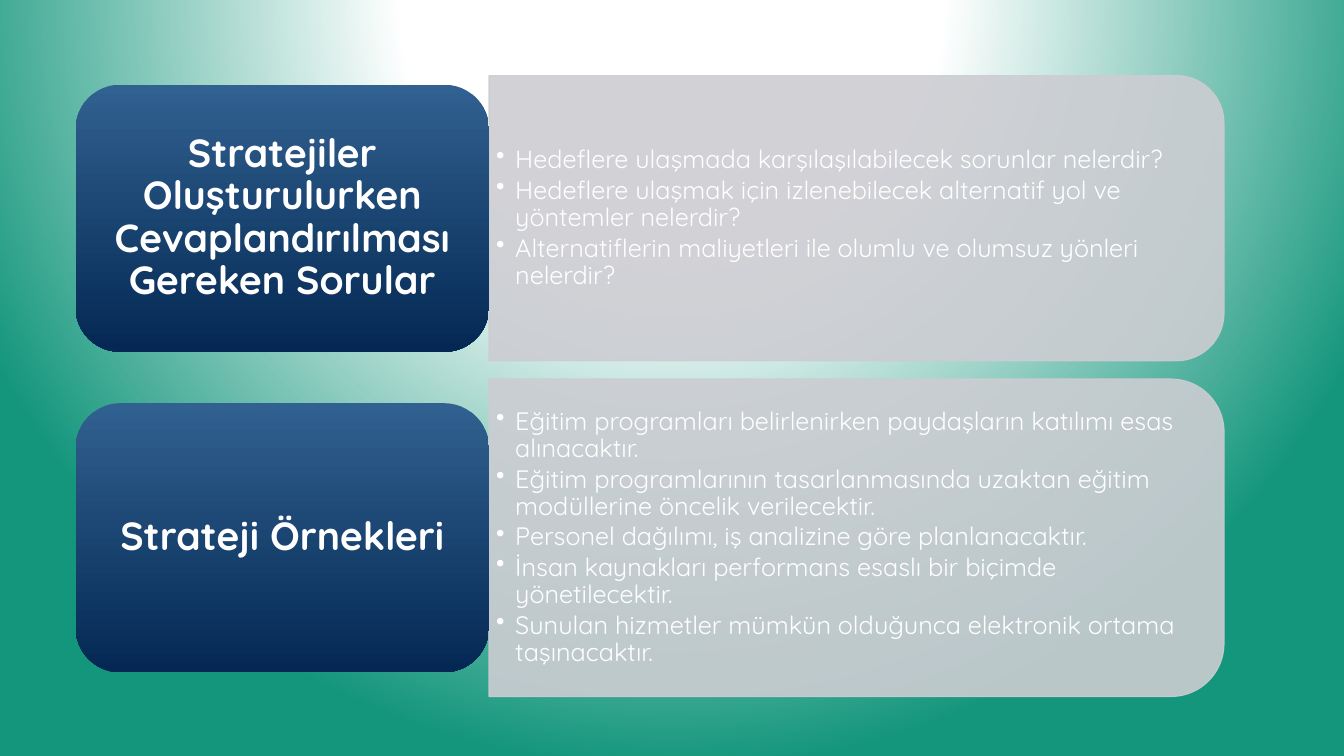
from lxml.etree import SubElement
from pptx import Presentation
from pptx.dml.color import RGBColor
from pptx.enum.shapes import MSO_SHAPE
from pptx.enum.text import MSO_ANCHOR, PP_ALIGN
from pptx.oxml import parse_xml
from pptx.oxml.ns import nsdecls, qn
from pptx.util import Inches, Pt

ROWS = [
    {
        "title": "Stratejiler Oluşturulurken Cevaplandırılması Gereken Sorular",
        "points": [
            "Hedeflere ulaşmada karşılaşılabilecek sorunlar nelerdir?",
            "Hedeflere ulaşmak için izlenebilecek alternatif yol ve yöntemler nelerdir?",
            "Alternatiflerin maliyetleri ile olumlu ve olumsuz yönleri nelerdir?",
        ],
        "panel_height": 2.83,
        "card_height": 2.65,
    },
    {
        "title": "Strateji Örnekleri",
        "points": [
            "Eğitim programları belirlenirken paydaşların katılımı esas alınacaktır.",
            "Eğitim programlarının tasarlanmasında uzaktan eğitim modüllerine öncelik verilecektir.",
            "Personel dağılımı, iş analizine göre planlanacaktır.",
            "İnsan kaynakları performans esaslı bir biçimde yönetilecektir.",
            "Sunulan hizmetler mümkün olduğunca elektronik ortama taşınacaktır.",
        ],
        "panel_height": 3.15,
        "card_height": 2.67,
    },
]
COLORS = {
    "white": "FFFFFF",
    "green": "14967C",
    "panel": "CCCDD2",
    "card_top": "316190",
    "card_bottom": "042853",
}
FONT = "Quicksand"
TITLE_FONT = {"size": Pt(28), "bold": True}
POINT_FONT = {"size": Pt(18), "bold": False}
TOP, ROW_GAP = 0.75, 0.18
CARD_LEFT, CARD_WIDTH = 0.75, 4.1
PANEL_LEFT, PANEL_WIDTH = CARD_LEFT + CARD_WIDTH, 7.29
CORNER_INSET = 0.05  # share of the panel height its rounded corners take from the text


def color(name):
    return RGBColor.from_string(COLORS[name])


def set_background(slide):
    """Radial gradient, centred above the slide."""
    slide.background.fill.solid()
    properties = slide.element.cSld.find(qn("p:bg")).find(qn("p:bgPr"))
    stops = "".join(
        f'<a:gs pos="{position * 1000}"><a:srgbClr val="{COLORS[name]}"/></a:gs>'
        for position, name in [(0, "white"), (35, "white"), (100, "green")]
    )
    gradient = parse_xml(
        f'<a:gradFill {nsdecls("a")} rotWithShape="1"><a:gsLst>{stops}</a:gsLst>'
        '<a:path path="circle"><a:fillToRect l="50000" t="-80000" r="50000" b="180000"/>'
        "</a:path></a:gradFill>"
    )
    properties.replace(properties.find(qn("a:solidFill")), gradient)


def format_frame(frame, margin_x, margin_y):
    settings = {
        "word_wrap": True,
        "vertical_anchor": MSO_ANCHOR.MIDDLE,
        "margin_left": Inches(margin_x),
        "margin_right": Inches(margin_x),
        "margin_top": Inches(margin_y),
        "margin_bottom": Inches(margin_y),
    }
    for name, value in settings.items():
        setattr(frame, name, value)


def write_paragraph(paragraph, text, font_format, alignment, space_after):
    paragraph.alignment = alignment
    paragraph.line_spacing = 0.9
    paragraph.space_after = Pt(space_after)
    run = paragraph.add_run()
    run.text = text
    run.font.color.rgb = color("white")
    for name, value in {"name": FONT, **font_format}.items():
        setattr(run.font, name, value)


def add_bullet(paragraph):
    properties = paragraph._p.get_or_add_pPr()
    properties.set("marL", str(Inches(0.19)))
    properties.set("indent", str(-Inches(0.19)))
    SubElement(properties, qn("a:buChar")).set("char", "•")


def add_panel(slide, top, height):
    """Upright shape turned a quarter, so that its rounded side faces right."""
    left = PANEL_LEFT + (PANEL_WIDTH - height) / 2
    upright_top = top + (height - PANEL_WIDTH) / 2
    panel = slide.shapes.add_shape(
        MSO_SHAPE.ROUND_2_SAME_RECTANGLE,
        Inches(left), Inches(upright_top), Inches(height), Inches(PANEL_WIDTH),
    )
    panel.rotation = 90
    panel.shadow.inherit = False
    panel.line.width = Pt(0.75)
    for fill in (panel.fill, panel.line.fill):
        fill.solid()
        fill.fore_color.rgb = color("panel")
    for rgb in panel._element.spPr.iter(qn("a:srgbClr")):
        SubElement(rgb, qn("a:alpha")).set("val", "90000")


def add_points(slide, points, top, height):
    inset = CORNER_INSET * height
    box = slide.shapes.add_textbox(
        Inches(PANEL_LEFT), Inches(top + inset),
        Inches(PANEL_WIDTH - inset), Inches(height - 2 * inset),
    )
    frame = box.text_frame
    format_frame(frame, 0.07, 0.04)
    for index, point in enumerate(points):
        paragraph = frame.add_paragraph() if index else frame.paragraphs[0]
        write_paragraph(paragraph, point, POINT_FONT, PP_ALIGN.LEFT, 2.5)
        add_bullet(paragraph)


def add_card(slide, title, top, height):
    card = slide.shapes.add_shape(
        MSO_SHAPE.ROUNDED_RECTANGLE,
        Inches(CARD_LEFT), Inches(top), Inches(CARD_WIDTH), Inches(height),
    )
    card.shadow.inherit = False
    card.line.fill.background()
    card.fill.gradient()
    card.fill.gradient_angle = 270
    for stop, name in zip(card.fill.gradient_stops, ("card_top", "card_bottom")):
        stop.color.rgb = color(name)
    format_frame(card.text_frame, 0.12, 0.06)
    write_paragraph(card.text_frame.paragraphs[0], title, TITLE_FONT, PP_ALIGN.CENTER, 0)


def main():
    presentation = Presentation()
    presentation.slide_width = Inches(13.33)
    presentation.slide_height = Inches(7.5)
    slide = presentation.slides.add_slide(presentation.slide_layouts[6])
    set_background(slide)
    top = TOP
    for row in ROWS:
        panel_height, card_height = row["panel_height"], row["card_height"]
        add_panel(slide, top, panel_height)
        add_points(slide, row["points"], top, panel_height)
        add_card(slide, row["title"], top + (panel_height - card_height) / 2, card_height)
        top += panel_height + ROW_GAP
    presentation.save("out.pptx")


if __name__ == "__main__":
    main()
